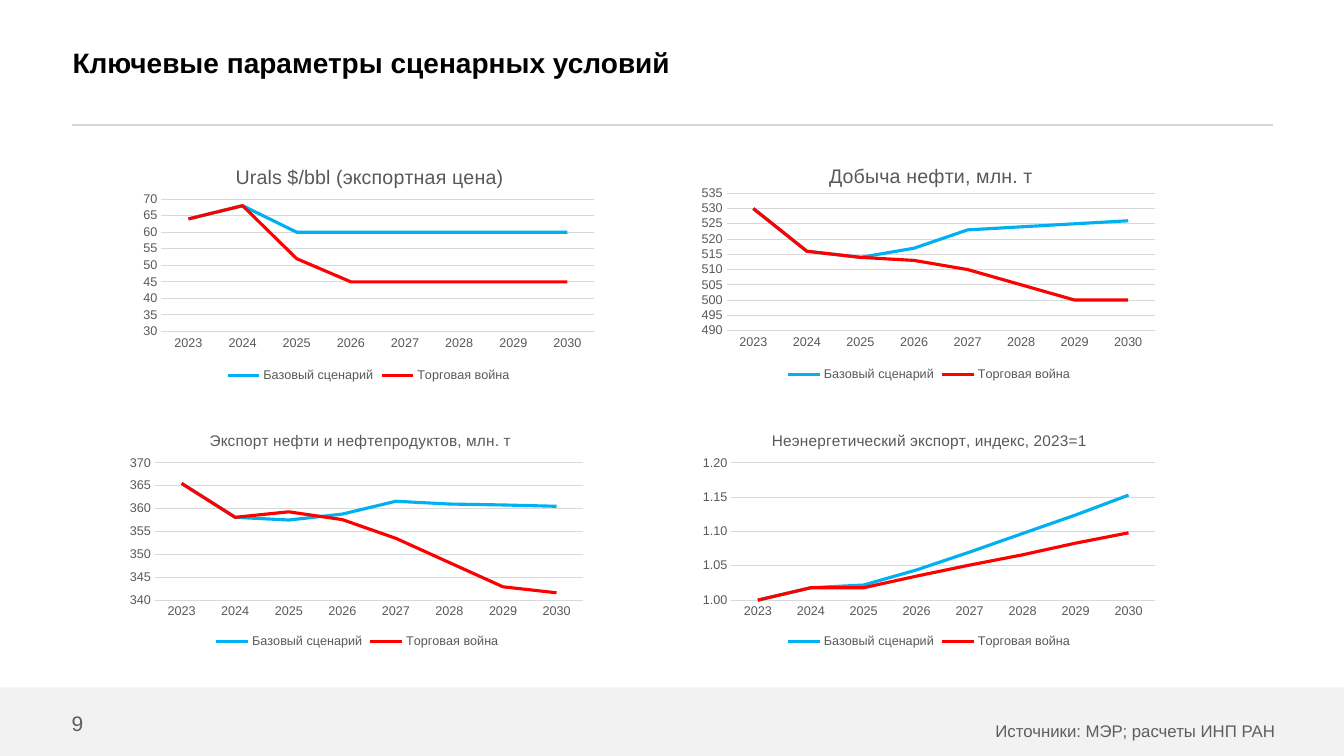
"""Build the slide on key parameters of the scenario conditions."""
from lxml import etree
from pptx import Presentation
from pptx.chart.data import CategoryChartData
from pptx.dml.color import RGBColor
from pptx.enum.chart import XL_CHART_TYPE, XL_LEGEND_POSITION, XL_TICK_MARK
from pptx.enum.shapes import MSO_CONNECTOR, MSO_SHAPE
from pptx.enum.text import MSO_ANCHOR, MSO_AUTO_SIZE, PP_ALIGN
from pptx.oxml.ns import qn
from pptx.util import Inches, Pt

LINE_CHART = XL_CHART_TYPE.LINE
LEGEND_BOTTOM = XL_LEGEND_POSITION.BOTTOM
NO_TICK = XL_TICK_MARK.NONE
STRAIGHT = MSO_CONNECTOR.STRAIGHT
RECTANGLE = MSO_SHAPE.RECTANGLE
TOP, MIDDLE = MSO_ANCHOR.TOP, MSO_ANCHOR.MIDDLE
LEFT, RIGHT = PP_ALIGN.LEFT, PP_ALIGN.RIGHT
NO_AUTOFIT = MSO_AUTO_SIZE.NONE

FONT = "Arial"
BLACK = RGBColor(0x00, 0x00, 0x00)
GRAY = RGBColor(0x5E, 0x5E, 0x5E)
CHART_TEXT = RGBColor(0x59, 0x59, 0x59)
GRID = RGBColor(0xD9, 0xD9, 0xD9)
RULE = RGBColor(0xD5, 0xD5, 0xD5)
FOOTER = RGBColor(0xF2, 0xF2, 0xF2)
BLUE = RGBColor(0x00, 0xB0, 0xF0)
RED = RGBColor(0xFF, 0x00, 0x00)

YEARS = [str(year) for year in range(2023, 2031)]
SCENARIOS = [("Базовый сценарий", BLUE), ("Торговая война", RED)]
CHART_WIDTH, CHART_HEIGHT = 4.67, 2.39

CHARTS = [
    dict(title="Urals $/bbl (экспортная цена)", title_size=14,
         left=1.32, top=1.45, title_at=(0.21, 0.06),
         plot_box=(0.06, 0.22, 0.92, 0.55), scale=(30, 70, 5),
         values=[(64, 68, 60, 60, 60, 60, 60, 60),
                 (64, 68, 52, 45, 45, 45, 45, 45)]),
    dict(title="Добыча нефти, млн. т", title_size=14,
         left=6.88, top=1.44, title_at=(0.28, 0.06),
         plot_box=(0.07, 0.2, 0.91, 0.57), scale=(490, 535, 5),
         values=[(530, 516, 514, 517, 523, 524, 525, 526),
                 (530, 516, 514, 513, 510, 505, 500, 500)]),
    dict(title="Экспорт нефти и нефтепродуктов, млн. т", title_size=11,
         left=1.21, top=4.09, title_at=(0.18, 0.06),
         plot_box=(0.07, 0.21, 0.91, 0.57), scale=(340, 370, 5),
         values=[(365.5, 358.1, 357.5, 358.8, 361.6, 361, 360.8, 360.5),
                 (365.5, 358.1, 359.3, 357.6, 353.5, 348.2, 342.9, 341.6)]),
    dict(title="Неэнергетический экспорт, индекс, 2023=1", title_size=11,
         left=6.88, top=4.09, title_at=(0.16, 0.06),
         plot_box=(0.08, 0.21, 0.9, 0.57), scale=(1, 1.2, 0.05),
         number_format="0.00",
         values=[(1, 1.018, 1.022, 1.044, 1.07, 1.097, 1.124, 1.153),
                 (1, 1.018, 1.018, 1.035, 1.051, 1.066, 1.083, 1.098)]),
]


def set_font(font, size, color, bold=False):
    """Apply the slide's typeface with a size and colour."""
    font.name, font.size, font.bold = FONT, Pt(size), bold
    font.color.rgb = color


def write_text(frame, text, size=12, color=GRAY, bold=False, align=LEFT,
               anchor=TOP, wrap=True, line_spacing=1.0):
    """Fill a text frame with one formatted paragraph."""
    frame.margin_left = frame.margin_right = 0
    frame.margin_top = frame.margin_bottom = 0
    frame.auto_size = NO_AUTOFIT
    frame.word_wrap, frame.vertical_anchor = wrap, anchor
    paragraph = frame.paragraphs[0]
    paragraph.alignment, paragraph.line_spacing = align, line_spacing
    run = paragraph.add_run()
    run.text = text
    set_font(run.font, size, color, bold)


def add_label(slide, text, left, top, width, height, **text_format):
    """Add a text box with formatted text."""
    box = slide.shapes.add_textbox(Inches(left), Inches(top),
                                   Inches(width), Inches(height))
    write_text(box.text_frame, text, **text_format)


def add_title(slide, text):
    """Move and format the title placeholder."""
    title = slide.shapes.title
    title.left, title.top = Inches(0.72), Inches(0)
    title.width, title.height = Inches(10.07), Inches(1.24)
    write_text(title.text_frame, text, size=20, color=BLACK, bold=True,
               anchor=MIDDLE)


def add_rule(slide):
    """Draw the line under the title."""
    rule = slide.shapes.add_connector(STRAIGHT, Inches(0.71), Inches(1.24),
                                      Inches(12.63), Inches(1.24))
    rule.line.color.rgb, rule.line.width = RULE, Pt(1.5)
    properties = rule.element.find(qn("p:spPr"))
    etree.SubElement(properties, qn("a:effectLst"))


def add_footer_band(slide):
    """Draw the pale band at the foot of the slide."""
    band = slide.shapes.add_shape(RECTANGLE, Inches(0), Inches(6.82),
                                  Inches(13.33), Inches(0.68))
    band.shadow.inherit = False
    band.fill.solid()
    band.fill.fore_color.rgb = FOOTER
    band.line.fill.background()


def place_part(part, position, settings):
    """Give a chart part a manual layout, in fractions of the chart."""
    for layout in part.findall(qn("c:layout")):
        part.remove(layout)
    layout = etree.Element(qn("c:layout"))
    manual = etree.SubElement(layout, qn("c:manualLayout"))
    for tag, value in settings:
        etree.SubElement(manual, qn(f"c:{tag}")).set("val", str(value))
    part.insert(position, layout)


def format_axes(chart, scale, number_format):
    """Style both axes and the gridlines."""
    years, amounts = chart.category_axis, chart.value_axis
    for axis in (years, amounts):
        axis.major_tick_mark = axis.minor_tick_mark = NO_TICK
        set_font(axis.tick_labels.font, 9, CHART_TEXT)
    amounts.minimum_scale, amounts.maximum_scale, amounts.major_unit = scale
    amounts.tick_labels.number_format = number_format
    amounts.tick_labels.number_format_is_linked = False
    amounts.format.line.fill.background()
    for line in (years.format.line, amounts.major_gridlines.format.line):
        line.color.rgb, line.width = GRID, Pt(0.75)


def add_scenario_chart(slide, title, title_size, left, top, title_at, plot_box,
                       scale, values, number_format="0"):
    """Add a line chart that compares the two scenarios."""
    data = CategoryChartData()
    data.categories = YEARS
    for (name, _), amounts in zip(SCENARIOS, values):
        data.add_series(name, amounts)
    chart = slide.shapes.add_chart(
        LINE_CHART, Inches(left), Inches(top), Inches(CHART_WIDTH),
        Inches(CHART_HEIGHT), data).chart
    set_font(chart.font, 10, BLACK)

    chart.has_title = True
    heading = chart.chart_title.text_frame.paragraphs[0].add_run()
    heading.text = title
    set_font(heading.font, title_size, CHART_TEXT)
    x, y = title_at
    place_part(chart.chart_title.element, 1,
               [("xMode", "edge"), ("yMode", "edge"), ("x", x), ("y", y)])
    plot_area = chart.element.xpath(".//c:plotArea")[0]
    place_part(plot_area, 0,
               [("layoutTarget", "inner"), ("xMode", "edge"), ("yMode", "edge"),
                *zip("xywh", plot_box)])

    chart.has_legend = True
    chart.legend.position = LEGEND_BOTTOM
    chart.legend.include_in_layout = False
    set_font(chart.legend.font, 9, CHART_TEXT)
    format_axes(chart, scale, number_format)

    plot = chart.plots[0]
    plot.vary_by_categories = False
    for series, (_, color) in zip(plot.series, SCENARIOS):
        series.smooth = False
        series.format.line.color.rgb = color
        series.format.line.width = Pt(2.25)


def main():
    """Assemble and save the slide."""
    presentation = Presentation()
    presentation.slide_width = Inches(13.33)
    presentation.slide_height = Inches(7.5)
    slide = presentation.slides.add_slide(presentation.slide_layouts[5])
    add_rule(slide)
    add_footer_band(slide)
    add_label(slide, "Источники: МЭР; расчеты ИНП РАН", 2.15, 7.05, 10.5, 0.27,
              align=RIGHT, line_spacing=1.5)
    add_label(slide, "9", 0.71, 7.05, 0.26, 0.25, size=15, anchor=MIDDLE,
              wrap=False)
    add_title(slide, "Ключевые параметры сценарных условий")
    for chart in CHARTS:
        add_scenario_chart(slide, **chart)
    presentation.save("out.pptx")


if __name__ == "__main__":
    main()
